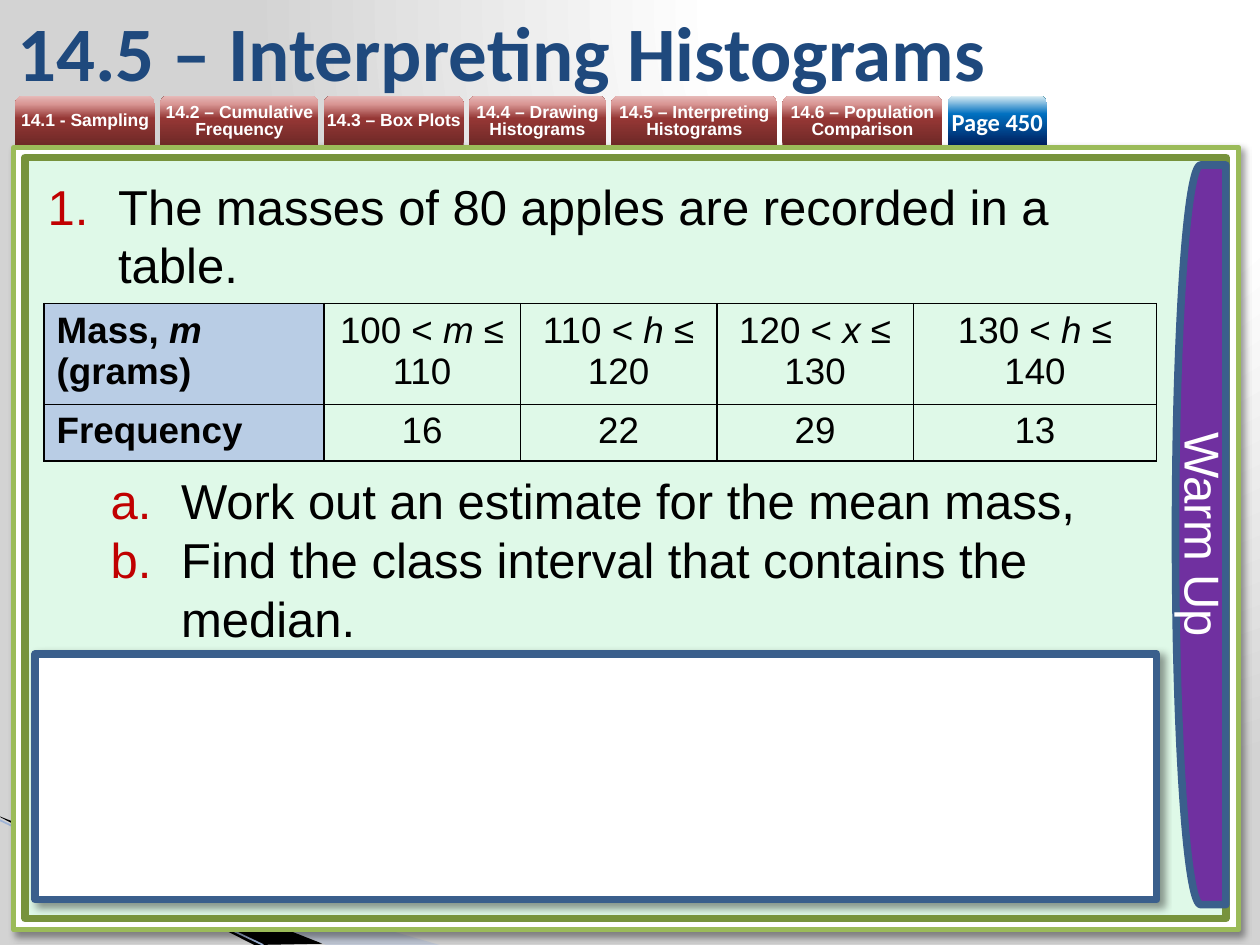
from copy import deepcopy

from pptx import Presentation
from pptx.dml.color import RGBColor
from pptx.enum.shapes import MSO_CONNECTOR as Connector
from pptx.enum.shapes import MSO_SHAPE as Shape
from pptx.enum.text import MSO_ANCHOR as Anchor
from pptx.enum.text import PP_ALIGN as Align
from pptx.oxml import parse_xml
from pptx.oxml.ns import nsdecls, qn
from pptx.util import Inches, Pt

WHITE = RGBColor(0xFF, 0xFF, 0xFF)
BLACK = RGBColor(0x00, 0x00, 0x00)
GREY = RGBColor(0xD3, 0xD3, 0xD3)
MINT = RGBColor(0xDF, 0xF9, 0xE8)
LIME = RGBColor(0x9B, 0xBB, 0x59)
OLIVE = RGBColor(0x77, 0x93, 0x3C)
NAVY = RGBColor(0x1F, 0x49, 0x7D)
STEEL = RGBColor(0x3A, 0x5F, 0x8C)
PURPLE = RGBColor(0x70, 0x30, 0xA0)
HEADER = RGBColor(0xB9, 0xCD, 0xE5)
RIBBON = RGBColor(0xA7, 0xB9, 0xDB)
RIBBON_EDGE = RGBColor(0x9E, 0xB3, 0xD6)
NUMBER = RGBColor(0xC0, 0x00, 0x00)

RED_STOPS = [(0, RGBColor(0x6F, 0x29, 0x27)), (54, RGBColor(0x95, 0x37, 0x35)),
             (83, RGBColor(0xD9, 0x96, 0x94)), (100, RGBColor(0xE6, 0xB9, 0xB8))]
BLUE_STOPS = [(0, RGBColor(0x00, 0x20, 0x60)), (63, RGBColor(0x00, 0x70, 0xC0)),
              (100, RGBColor(0xDB, 0xEE, 0xF4))]
PAGE_STOPS = [(0, WHITE), (40, WHITE), (100, GREY)]

TABS = [("14.1 - Sampling", 1.11), ("14.2 – Cumulative Frequency", 1.26),
        ("14.3 – Box Plots", 1.11), ("14.4 – Drawing Histograms", 1.09),
        ("14.5 – Interpreting Histograms", 1.32), ("14.6 – Population Comparison", 1.27)]
TAB_GAP = 0.04
MASSES = [["Mass, *m* (grams)", "100 < *m* ≤ 110", "110 < *h* ≤ 120",
           "120 < *x* ≤ 130", "130 < *h* ≤ 140"],
          ["Frequency", "16", "22", "29", "13"]]
QUESTIONS = [("The masses of 80 apples are recorded in a table.", 0, "arabicPeriod", 0),
             ("Work out an estimate for the mean mass,", 1, "alphaLcPeriod", 101),
             ("Find the class interval that contains the median.", 1, "alphaLcPeriod", 0)]


class Lesson:
    """Draws styled lesson elements on the current page."""

    def __init__(self, page, font="Arial"):
        self.page = page
        self.font = font

    def put_text(self, para, text, size, colour, bold=False, align=Align.LEFT, font=None):
        para.alignment = align
        for index, piece in enumerate(text.split("*")):
            span = para.add_run()
            span.text = piece
            span.font.name = font or self.font
            span.font.size = Pt(size)
            span.font.bold = bold
            span.font.italic = index % 2 == 1
            span.font.color.rgb = colour

    def gradient(self, fill, stops):
        fill.gradient()
        stop_list = fill.gradient_stops[0]._gs.getparent()
        for old in list(stop_list):
            stop_list.remove(old)
        for place, colour in stops:
            stop_list.append(parse_xml(
                f'<a:gs {nsdecls("a")} pos="{place * 1000}"><a:srgbClr val="{colour}"/></a:gs>'))
        return stop_list.getparent()

    def backdrop(self, stops):
        gradient = self.gradient(self.page.background.fill, stops)
        gradient.replace(gradient.find(qn("a:lin")), parse_xml(
            f'<a:path {nsdecls("a")} path="circle">'
            '<a:fillToRect l="65000" b="98000"/></a:path>'))

    def shape(self, kind, left, top, width, height, fill=None, line=None, weight=4.33, shadow=False):
        box = self.page.shapes.add_shape(
            kind, Inches(left), Inches(top), Inches(width), Inches(height))
        box.shadow.inherit = False
        if fill is not None:
            box.fill.solid()
            box.fill.fore_color.rgb = fill
        if line is None:
            box.line.fill.background()
        else:
            box.line.color.rgb = line
            box.line.width = Pt(weight)
        if shadow:
            box._element.spPr.find(qn("a:effectLst")).append(parse_xml(
                f'<a:outerShdw {nsdecls("a")} blurRad="{Pt(4)}" dist="{Pt(3)}" dir="2700000">'
                '<a:srgbClr val="000000"><a:alpha val="40000"/></a:srgbClr></a:outerShdw>'))
        return box

    def tab(self, text, left, width, stops, size=10, spacing=None, font=None):
        box = self.shape(Shape.ROUND_2_SAME_RECTANGLE, left, 0.76, width, 0.39)
        self.gradient(box.fill, stops)
        box.fill.gradient_angle = 90
        frame = box.text_frame
        frame.margin_left = frame.margin_right = frame.margin_top = frame.margin_bottom = 0
        frame.vertical_anchor = Anchor.MIDDLE
        para = frame.paragraphs[0]
        para.line_spacing = spacing
        self.put_text(para, text, size, WHITE, True, Align.CENTER, font)

    def sliver(self, points, colour, opacity=100):
        corners = [(Inches(x), Inches(y)) for x, y in points]
        builder = self.page.shapes.build_freeform(*corners[0])
        builder.add_line_segments(corners[1:])
        sliver = builder.convert_to_shape()
        sliver.shadow.inherit = False
        sliver.fill.solid()
        sliver.fill.fore_color.rgb = colour
        sliver.line.fill.background()
        sliver._element.spPr.find(".//" + qn("a:srgbClr")).append(
            parse_xml(f'<a:alpha {nsdecls("a")} val="{opacity * 1000}"/>'))

    def line(self, start, end, colour, weight):
        ends = [Inches(value) for value in (*start, *end)]
        line = self.page.shapes.add_connector(Connector.STRAIGHT, *ends)
        line.line.color.rgb = colour
        line.line.width = Pt(weight)
        line._element.spPr.append(parse_xml(f'<a:effectLst {nsdecls("a")}/>'))

    def text_box(self, left, top, width, height):
        box = self.page.shapes.add_textbox(
            Inches(left), Inches(top), Inches(width), Inches(height))
        box.text_frame.word_wrap = True
        return box.text_frame

    def questions(self, frame, items):
        for index, (text, level, scheme, before) in enumerate(items):
            para = frame.add_paragraph() if index else frame.paragraphs[0]
            para.level = level
            para.line_spacing = Pt(33.6)
            para.space_before = Pt(before)
            props = para._p.get_or_add_pPr()
            props.set("marL", str(Inches(0.56 + level * 0.5)))
            props.set("indent", str(Inches(-0.56)))
            props.append(parse_xml(
                f'<a:buClr {nsdecls("a")}><a:srgbClr val="{NUMBER}"/></a:buClr>'))
            props.append(parse_xml(f'<a:buFont {nsdecls("a")} typeface="{self.font}"/>'))
            props.append(parse_xml(f'<a:buAutoNum {nsdecls("a")} type="{scheme}"/>'))
            self.put_text(para, text, 28, BLACK)

    def table(self, left, top, widths, heights, rows):
        table = self.page.shapes.add_table(
            len(rows), len(widths), Inches(left), Inches(top),
            Inches(sum(widths)), Inches(sum(heights))).table
        table.first_row = table.horz_banding = False
        for column, width in zip(table.columns, widths):
            column.width = Inches(width)
        border = parse_xml(f'<a:ln {nsdecls("a")} w="{Pt(1)}"><a:solidFill>'
                           f'<a:srgbClr val="{BLACK}"/></a:solidFill></a:ln>')
        for r, texts in enumerate(rows):
            table.rows[r].height = Inches(heights[r])
            for c, text in enumerate(texts):
                cell = table.cell(r, c)
                heading = c == 0
                self.put_text(cell.text_frame.paragraphs[0], text, 21, BLACK, heading,
                              Align.LEFT if heading else Align.CENTER)
                props = cell._tc.get_or_add_tcPr()
                for side in ("lnL", "lnR", "lnT", "lnB"):
                    edge = deepcopy(border)
                    edge.tag = qn("a:" + side)
                    props.append(edge)
                if heading:
                    cell.fill.solid()
                    cell.fill.fore_color.rgb = HEADER
                else:
                    cell.fill.background()


def main():
    deck = Presentation()
    deck.slide_width, deck.slide_height = Inches(10), Inches(7.5)
    lesson = Lesson(deck.slides.add_slide(deck.slide_layouts[6]))
    lesson.backdrop(PAGE_STOPS)
    lesson.sliver([(0, 6.49), (3.49, 7.5), (2.59, 7.5)], RIBBON, 40)
    lesson.sliver([(0, 6.48), (2.56, 7.49), (2.02, 7.5), (0.01, 6.49)], BLACK)
    lesson.line((0, 6.51), (2.09, 7.5), RIBBON_EDGE, 0.95)
    lesson.shape(Shape.RECTANGLE, 0.11, 1.17, 9.72, 6.21, WHITE, LIME, 3, shadow=True)
    lesson.shape(Shape.RECTANGLE, 0.2, 1.25, 9.53, 6.04, MINT, OLIVE)

    left = 0.12
    for text, width in TABS:
        lesson.tab(text, left, width, RED_STOPS, spacing=Pt(10))
        left += width + TAB_GAP
    lesson.tab("Page 450", left, 0.79, BLUE_STOPS, size=14, font="Calibri")

    title = lesson.text_box(0.04, 0.05, 8.27, 0.71)
    title.vertical_anchor = Anchor.MIDDLE
    lesson.put_text(title.paragraphs[0], "14.5 – Interpreting Histograms", 44, NAVY, True,
                    font="Calibri")

    lesson.questions(lesson.text_box(0.28, 1.35, 8.9, 3.87), QUESTIONS)
    lesson.table(0.35, 2.41, [2.22, 1.56, 1.56, 1.56, 1.93], [0.8, 0.45], MASSES)
    lesson.shape(Shape.RECTANGLE, 0.28, 5.19, 8.9, 1.95, WHITE, STEEL, shadow=True)

    warm_up = lesson.shape(Shape.FLOWCHART_DELAY, 9.33, 1.31, 0.4, 5.87, PURPLE, STEEL)
    warm_up._element.spPr.find(qn("a:xfrm")).set("flipH", "1")
    warm_up.text_frame._txBody.bodyPr.set("vert", "vert")
    warm_up.text_frame.vertical_anchor = Anchor.MIDDLE
    lesson.put_text(warm_up.text_frame.paragraphs[0], "Warm Up", 28, WHITE, align=Align.CENTER)
    deck.save("out.pptx")


if __name__ == "__main__":
    main()
